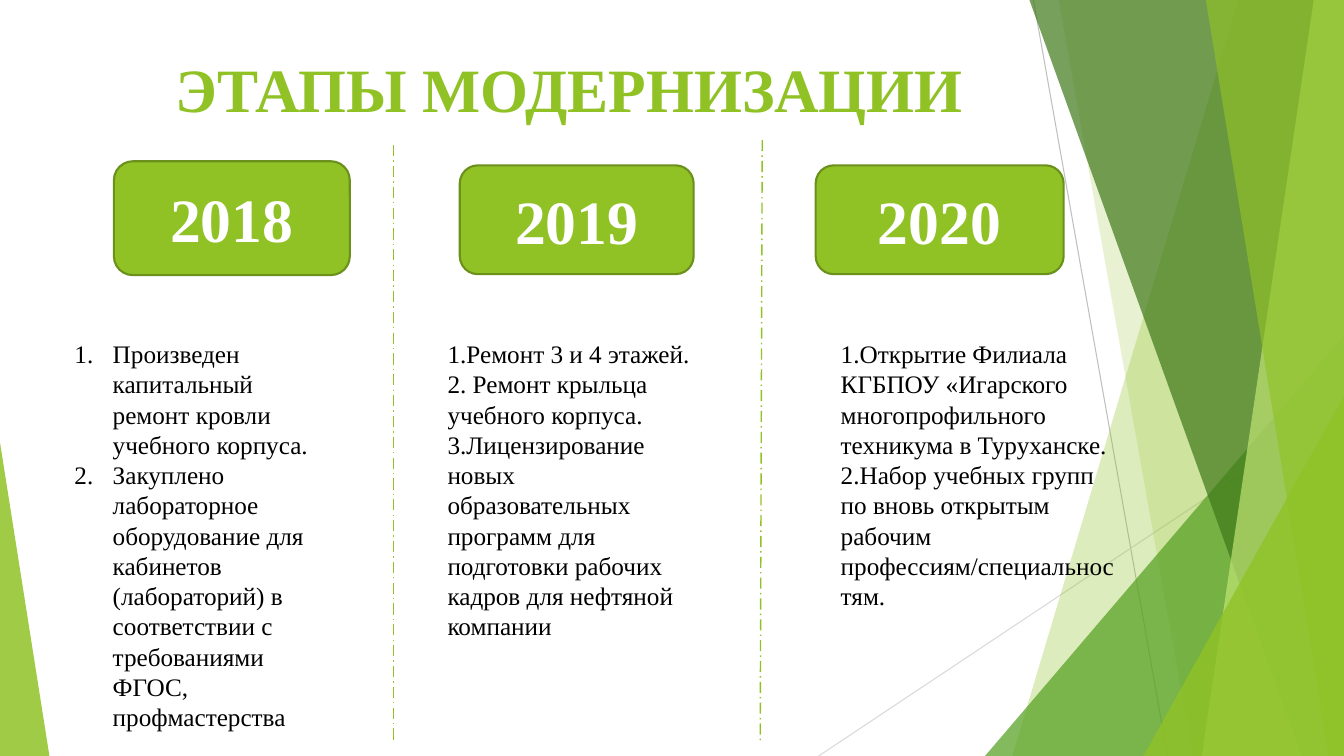
from lxml import etree
from pptx import Presentation
from pptx.dml.color import RGBColor
from pptx.enum.dml import MSO_LINE
from pptx.enum.shapes import MSO_CONNECTOR, MSO_SHAPE
from pptx.enum.text import MSO_ANCHOR, MSO_AUTO_SIZE, PP_ALIGN
from pptx.oxml.ns import qn
from pptx.util import Inches, Pt

FONT = "Times New Roman"
W, H = 13.33, 7.5
LIME = RGBColor(0x90, 0xC2, 0x26)
GREEN = RGBColor(0x54, 0xA0, 0x21)
FOREST = RGBColor(0x3F, 0x78, 0x19)
PALE = RGBColor(0xC0, 0xE4, 0x74)
OLIVE = RGBColor(0x6B, 0x90, 0x1C)
GREY = RGBColor(0xBF, 0xBF, 0xBF)
LIGHT_GREY = RGBColor(0xD9, 0xD9, 0xD9)
WHITE = RGBColor(0xFF, 0xFF, 0xFF)
BLACK = RGBColor(0, 0, 0)
CENTER, LEFT = PP_ALIGN.CENTER, PP_ALIGN.LEFT
MIDDLE, TOP = MSO_ANCHOR.MIDDLE, MSO_ANCHOR.TOP
FIT, NO_FIT = MSO_AUTO_SIZE.SHAPE_TO_FIT_TEXT, MSO_AUTO_SIZE.NONE
STRAIGHT = MSO_CONNECTOR.STRAIGHT
TRIANGLE, ROUNDED = MSO_SHAPE.ISOSCELES_TRIANGLE, MSO_SHAPE.ROUNDED_RECTANGLE
DASH_DOT = MSO_LINE.LONG_DASH_DOT


def write(tf, lines, size=18, color=BLACK, bold=False, align=LEFT,
          anchor=TOP, fit=NO_FIT, numbered=False):
    tf.word_wrap = True
    tf.auto_size = fit
    tf.vertical_anchor = anchor
    for i, line in enumerate(lines):
        p = tf.paragraphs[0] if i == 0 else tf.add_paragraph()
        p.alignment = align
        if numbered:
            pPr = p._p.get_or_add_pPr()
            pPr.set("marL", str(Inches(0.38)))
            pPr.set("indent", str(-Inches(0.38)))
            etree.SubElement(pPr, qn("a:buFont"), typeface="+mj-lt")
            etree.SubElement(pPr, qn("a:buAutoNum"), type="arabicPeriod")
        r = p.add_run()
        r.text = line
        r.font.name = FONT
        r.font.size = Pt(size)
        r.font.bold = bold
        r.font.color.rgb = color


class StageSlide:
    def __init__(self, prs):
        self.s = prs.slides.add_slide(prs.slide_layouts[5])
        self.shapes = self.s.shapes

    def title(self, text, *box):
        sp = self.shapes.title
        sp.left, sp.top, sp.width, sp.height = map(Inches, box)
        write(sp.text_frame, [text], size=44, color=LIME, bold=True,
              align=CENTER, anchor=MIDDLE)

    def line(self, x1, y1, x2, y2, color, width=0.75, dash=None):
        c = self.shapes.add_connector(STRAIGHT, *map(Inches, (x1, y1, x2, y2)))
        c.line.color.rgb = color
        c.line.width = Pt(width)
        if dash:
            c.line.dash_style = dash
        etree.SubElement(c._element.spPr, qn("a:effectLst"))

    def tint(self, sp, color, opacity):
        sp.shadow.inherit = False
        sp.fill.solid()
        sp.fill.fore_color.rgb = color
        sp.line.fill.background()
        clr = sp._element.spPr.find(qn("a:solidFill")).find(qn("a:srgbClr"))
        etree.SubElement(clr, qn("a:alpha"), val=str(opacity * 1000))

    def facet(self, top_x, bottom_x, color, opacity):
        fb = self.shapes.build_freeform(Inches(top_x), 0)
        corners = [(W, 0), (W, H), (bottom_x, H)]
        fb.add_line_segments([(Inches(x), Inches(y)) for x, y in corners])
        self.tint(fb.convert_to_shape(), color, opacity)

    def triangle(self, x, y, width, apex, color, opacity):
        sp = self.shapes.add_shape(TRIANGLE, *map(Inches, (x, y, width, H - y)))
        sp.adjustments[0] = apex
        self.tint(sp, color, opacity)

    def year(self, text, *box):
        sp = self.shapes.add_shape(ROUNDED, *map(Inches, box))
        sp.shadow.inherit = False
        sp.fill.solid()
        sp.fill.fore_color.rgb = LIME
        sp.line.color.rgb = OLIVE
        sp.line.width = Pt(1.5)
        write(sp.text_frame, [text], size=44, color=WHITE, bold=True,
              align=CENTER, anchor=MIDDLE)

    def text(self, lines, *box, numbered=False):
        sp = self.shapes.add_textbox(*map(Inches, box))
        write(sp.text_frame, lines, fit=FIT, numbered=numbered)


def main():
    prs = Presentation()
    prs.slide_width, prs.slide_height = Inches(W), Inches(H)
    slide = StageSlide(prs)

    slide.line(10.25, 0, 11.58, H, GREY)
    slide.line(W, 4.03, 8.12, H, LIGHT_GREY)
    slide.facet(12.28, 10.04, LIME, 30)
    slide.facet(10.5, 11.83, LIME, 20)
    slide.triangle(9.77, 3.33, 3.56, 1, GREEN, 72)
    slide.facet(10.21, 12.91, FOREST, 70)
    slide.facet(13.03, 11.92, PALE, 70)
    slide.facet(11.96, 13.18, LIME, 65)
    slide.triangle(11.34, 3.93, 1.99, 1, LIME, 80)
    slide.triangle(0, 4.39, 0.49, 0, LIME, 85)

    slide.title("ЭТАПЫ МОДЕРНИЗАЦИИ", 0.74, 0.47, 9.82, 0.81)
    slide.year("2018", 1.13, 1.6, 2.34, 1.13)
    slide.year("2019", 4.56, 1.64, 2.32, 1.08)
    slide.year("2020", 8.09, 1.64, 2.46, 1.08)
    slide.line(3.9, 1.44, 3.9, 7.35, LIME, 1, DASH_DOT)
    slide.line(7.56, 1.39, 7.54, 7.35, LIME, 1, DASH_DOT)

    slide.text([
        "Произведен капитальный ремонт кровли учебного корпуса.",
        "Закуплено лабораторное оборудование для кабинетов (лабораторий) "
        "в соответствии с требованиями ФГОС, профмастерства",
    ], 0.64, 3.31, 2.77, 4.04, numbered=True)
    slide.text([
        "1.Ремонт 3 и 4 этажей.",
        "2. Ремонт крыльца учебного корпуса.",
        "3.Лицензирование новых образовательных программ для подготовки "
        "рабочих кадров для нефтяной компании",
    ], 4.34, 3.31, 2.72, 3.37)
    slide.text([
        "1.Открытие Филиала КГБПОУ «Игарского многопрофильного техникума "
        "в Туруханске.",
        "2.Набор учебных групп по вновь открытым рабочим "
        "профессиям/специальностям.",
    ], 8.24, 3.31, 2.92, 2.83)

    prs.save("out.pptx")


if __name__ == "__main__":
    main()
